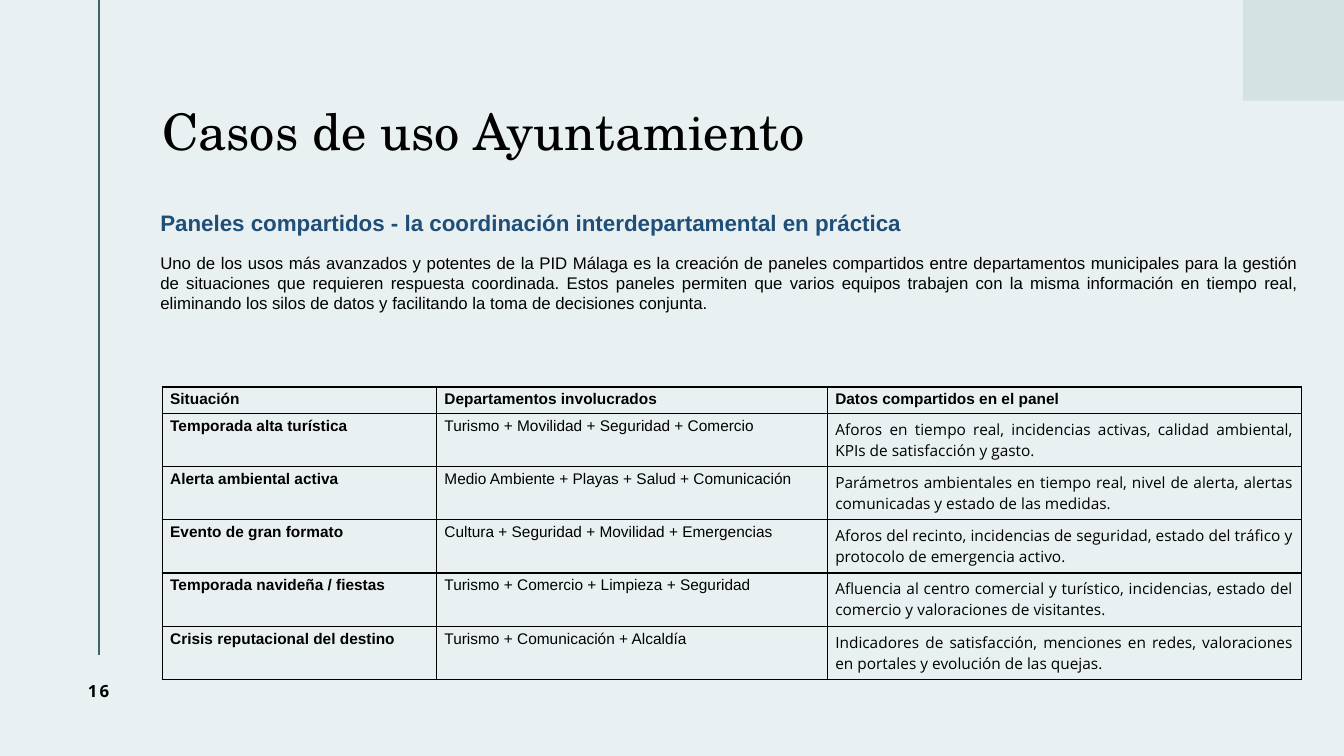
from lxml.etree import SubElement
from pptx import Presentation
from pptx.dml.color import RGBColor
from pptx.enum.shapes import MSO_CONNECTOR as CONN, MSO_SHAPE as SHAPE
from pptx.enum.text import MSO_ANCHOR as ANCHOR, PP_ALIGN as ALIGN
from pptx.oxml import parse_xml
from pptx.oxml.ns import nsdecls, qn
from pptx.util import Cm, Pt


def rgb(color):
    return RGBColor.from_string(color)


def write(p, text, size, font, bold=False, color="000000", align=ALIGN.LEFT):
    """Put one formatted run in a paragraph and return its font."""
    p.text = text
    p.alignment = align
    f = p.runs[0].font
    f.size, f.name, f.bold = Pt(size), font, bold
    f.color.rgb = rgb(color)
    return f


prs = Presentation()
prs.slide_width, prs.slide_height = Cm(33.87), Cm(19.05)
s = prs.slides.add_slide(prs.slide_layouts[6])
s.background.fill.solid()
s.background.fill.fore_color.rgb = rgb("E9F0F1")

# Decoration
rule = s.shapes.add_connector(CONN.STRAIGHT, Cm(2.5), Cm(0), Cm(2.5), Cm(16.5))
rule.line.color.rgb = rgb("3F636A")
rule.line.width = Pt(1.5)
SubElement(rule._element.spPr, qn("a:effectLst"))

corner = s.shapes.add_shape(SHAPE.RECTANGLE, Cm(31.33), Cm(0), Cm(2.54), Cm(2.54))
corner.shadow.inherit = False
corner.fill.solid()
corner.fill.fore_color.rgb = rgb("D4E2E4")
corner.line.fill.background()

# Title
title = s.shapes.add_textbox(Cm(4.09), Cm(1.4), Cm(25.43), Cm(3.96))
tf = title.text_frame
tf.word_wrap = True
tf.vertical_anchor = ANCHOR.MIDDLE
tf.margin_left = 0
write(tf.paragraphs[0], "Casos de uso Ayuntamiento", 36, "TeX Gyre Schola")
tf.paragraphs[0].line_spacing = 0.9

# Introduction
intro = s.shapes.add_textbox(Cm(4.04), Cm(5.26), Cm(28.7), Cm(3.5))
tf = intro.text_frame
tf.word_wrap = True
tf.margin_left = tf.margin_right = tf.margin_top = tf.margin_bottom = 0
write(tf.paragraphs[0],
      "Paneles compartidos - la coordinación interdepartamental en práctica",
      16, "Arial", True, "1F4E79")
p = tf.add_paragraph()
write(p,
      "Uno de los usos más avanzados y potentes de la PID Málaga es la creación de "
      "paneles compartidos entre departamentos municipales para la gestión de "
      "situaciones que requieren respuesta coordinada. Estos paneles permiten que "
      "varios equipos trabajen con la misma información en tiempo real, eliminando "
      "los silos de datos y facilitando la toma de decisiones conjunta.",
      12, "Arial", align=ALIGN.JUSTIFY)
p.space_before = Pt(12)

# Table of shared panels
rows = [
    ("Situación", "Departamentos involucrados", "Datos compartidos en el panel"),
    ("Temporada alta turística", "Turismo + Movilidad + Seguridad + Comercio",
     "Aforos en tiempo real, incidencias activas, calidad ambiental, KPIs de "
     "satisfacción y gasto."),
    ("Alerta ambiental activa", "Medio Ambiente + Playas + Salud + Comunicación",
     "Parámetros ambientales en tiempo real, nivel de alerta, alertas comunicadas "
     "y estado de las medidas."),
    ("Evento de gran formato", "Cultura + Seguridad + Movilidad + Emergencias",
     "Aforos del recinto, incidencias de seguridad, estado del tráfico y protocolo "
     "de emergencia activo."),
    ("Temporada navideña / fiestas", "Turismo + Comercio + Limpieza + Seguridad",
     "Afluencia al centro comercial y turístico, incidencias, estado del comercio "
     "y valoraciones de visitantes."),
    ("Crisis reputacional del destino", "Turismo + Comunicación + Alcaldía",
     "Indicadores de satisfacción, menciones en redes, valoraciones en portales y "
     "evolución de las quejas."),
]
widths = [6.91, 9.85, 11.94]
header_height, row_height = 0.65, 1.34
table = s.shapes.add_table(
    len(rows), len(widths), Cm(4.09), Cm(9.75), Cm(sum(widths)),
    Cm(header_height + row_height * (len(rows) - 1))).table
table.first_row = table.horz_banding = False
for column, width in zip(table.columns, widths):
    column.width = Cm(width)

for i, texts in enumerate(rows):
    table.rows[i].height = Cm(row_height if i else header_height)
    for j, text in enumerate(texts):
        cell = table.cell(i, j)
        is_data = i > 0 and j == 2
        cell.margin_left = cell.margin_right = Cm(0.2)
        cell.margin_top = cell.margin_bottom = Cm(0.14 if is_data else 0.1)
        write(cell.text_frame.paragraphs[0], text, 11,
              "Open Sans" if is_data else "Arial", bold=i == 0 or j == 0,
              align=ALIGN.JUSTIFY if is_data else ALIGN.LEFT)
        for side in ("lnL", "lnR", "lnT", "lnB"):
            cell._tc.get_or_add_tcPr().append(parse_xml(
                f'<a:{side} {nsdecls("a")} w="{Pt(1)}"><a:solidFill>'
                f'<a:srgbClr val="000000"/></a:solidFill></a:{side}>'))
        cell.fill.background()

# Slide number
number = s.shapes.add_textbox(Cm(1.14), Cm(16.51), Cm(2.69), Cm(1.8))
tf = number.text_frame
tf.word_wrap = True
tf.vertical_anchor = ANCHOR.MIDDLE
write(tf.paragraphs[0], "16", 12, "Open Sans", True, align=ALIGN.CENTER)
tf.paragraphs[0].runs[0]._r.get_or_add_rPr().set("spc", "150")

prs.save("out.pptx")
